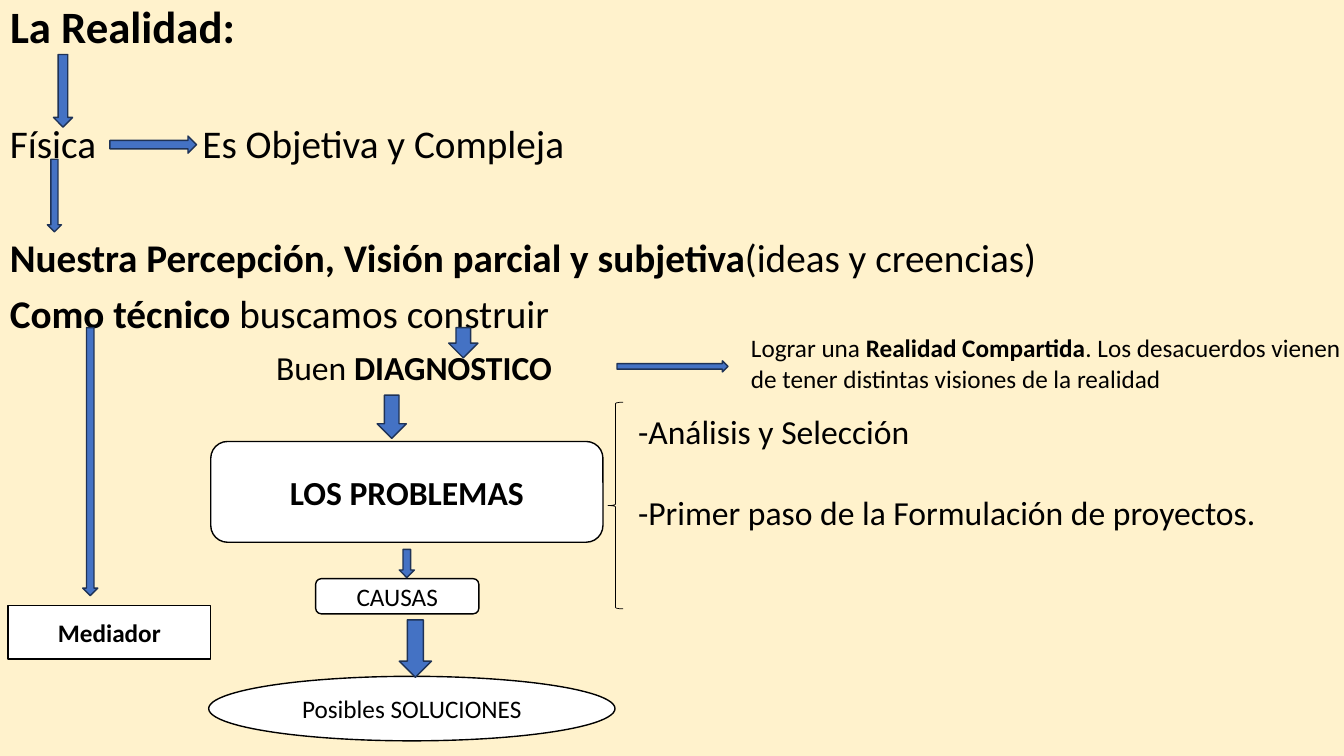
import pptx
import pptx.util
import pptx.dml.color
import pptx.enum.shapes
import pptx.enum.text
import pptx.oxml
import pptx.oxml.ns
from dataclasses import dataclass

Inches, Pt = pptx.util.Inches, pptx.util.Pt
SHAPE = pptx.enum.shapes.MSO_SHAPE
ALIGN = pptx.enum.text.PP_ALIGN
ANCHOR = pptx.enum.text.MSO_ANCHOR


@dataclass(frozen=True)
class Theme:
    font: str = "Calibri"
    background: str = "FFF2CC"
    ink: str = "000000"
    box: str = "FFFFFF"
    arrow: str = "4472C4"
    arrow_edge: str = "1E3256"
    title: int = 32
    lead: int = 28
    medium: int = 24
    small: int = 18


theme = Theme()

# Content: a paragraph is (runs, size, space before, indent), a run is (text, bold)
TITLE = [([("La Realidad:", True)], theme.title, 0, 0)]
LEAD = [
    ([("Física\tEs Objetiva y Compleja", False)], theme.lead, 0, 0),
    ([("Nuestra Percepción, Visión parcial y subjetiva", True),
      ("(ideas y creencias)", False)], theme.lead, 50.8, 0),
    ([("Como técnico ", True), ("buscamos construir", False)], theme.lead, 10, 0),
    ([("Buen ", False), ("DIAGNOSTICO", True)], theme.medium, 10, 2.64),
]
STEPS = [
    ([("-Análisis y Selección", False)], theme.medium, 0, 0),
    ([("-Primer paso de la Formulación de proyectos.", False)], theme.medium, 29, 0),
]
SHARED = [([("Lograr una ", False), ("Realidad Compartida", True),
            (". Los desacuerdos vienen de tener distintas visiones de la realidad", False)],
           theme.small, 0, 0)]

# Text areas: paragraphs, (left, top, width, height), line spacing
TEXTS = [
    (LEAD, (0, 1.19, 13.33, 2.75), 0.9),
    (STEPS, (6.23, 4.03, 6.28, 1.72), 1),
    (SHARED, (7.35, 3.25, 5.98, 0.71), 1),
]
BOXES = [
    (SHAPE.ROUNDED_RECTANGLE, (2.09, 4.38, 3.89, 1), "LOS PROBLEMAS", theme.medium, True),
    (SHAPE.ROUNDED_RECTANGLE, (3.13, 5.74, 1.62, 0.35), "CAUSAS", theme.small, False),
    (SHAPE.OVAL, (2.07, 6.71, 4.03, 0.64), "Posibles SOLUCIONES", theme.small, False),
    (SHAPE.RECTANGLE, (0.08, 6.01, 2.01, 0.53), "Mediador", theme.small, True),
]
ARROWS = [
    (0.53, 0.54, 0.19, 0.72),
    (1.09, 1.35, 0.86, 0.17),
    (0.47, 1.58, 0.14, 0.72),
    (0.82, 3.25, 0.15, 2.66),
    (4.45, 3.25, 0.29, 0.3),
    (6.12, 3.58, 1.1, 0.11),
    (3.74, 3.92, 0.29, 0.43),
    (3.96, 5.45, 0.15, 0.28),
    (3.96, 6.15, 0.32, 0.57),
]
BRACE = (6.03, 3.99, 0.15, 2.05)
TAB = 1.91


def rgb(color):
    return pptx.dml.color.RGBColor.from_string(color)


def style_run(r, size, bold):
    r.font.name, r.font.size, r.font.bold = theme.font, Pt(size), bold
    r.font.color.rgb = rgb(theme.ink)


def write(tf, paragraphs, spacing):
    tf.word_wrap = True
    tf.margin_right = 0
    tf.vertical_anchor = ANCHOR.TOP
    for i, (runs, size, before, indent) in enumerate(paragraphs):
        p = tf.paragraphs[0] if i == 0 else tf.add_paragraph()
        p.alignment = ALIGN.LEFT
        p.line_spacing, p.space_before = spacing, Pt(before)
        pPr = p._p.get_or_add_pPr()
        pPr.set("marL", str(Inches(indent)))
        for text, bold in runs:
            r = p.add_run()
            r.text = text
            style_run(r, size, bold)
        if any("\t" in text for text, _ in runs):
            tabs = pptx.oxml.parse_xml(
                f'<a:tabLst {pptx.oxml.ns.nsdecls("a")}>'
                f'<a:tab pos="{Inches(TAB)}" algn="l"/></a:tabLst>')
            pPr.append(tabs)


def add_shape(slide, kind, at, fill, edge, width=1):
    sp = slide.shapes.add_shape(kind, *map(Inches, at))
    sp.shadow.inherit = False
    if fill:
        sp.fill.solid()
        sp.fill.fore_color.rgb = rgb(fill)
    else:
        sp.fill.background()
    sp.line.color.rgb = rgb(edge)
    sp.line.width = Pt(width)
    return sp


def main():
    prs = pptx.Presentation()
    prs.slide_width, prs.slide_height = Inches(13.33), Inches(7.5)
    slide = prs.slides.add_slide(prs.slide_layouts[5])
    slide.background.fill.solid()
    slide.background.fill.fore_color.rgb = rgb(theme.background)

    # Title
    title = slide.shapes.title
    title.left, title.top, title.width, title.height = map(Inches, (0, 0, 13.33, 0.55))
    write(title.text_frame, TITLE, 0.9)

    # Running text
    for paragraphs, at, spacing in TEXTS:
        sp = slide.shapes.add_textbox(*map(Inches, at))
        write(sp.text_frame, paragraphs, spacing)

    # Boxes of the problem chain
    for kind, at, text, size, bold in BOXES:
        sp = add_shape(slide, kind, at, theme.box, theme.ink)
        tf = sp.text_frame
        tf.text = text
        tf.word_wrap = True
        tf.vertical_anchor = ANCHOR.MIDDLE
        p = tf.paragraphs[0]
        p.alignment = ALIGN.CENTER
        style_run(p.runs[0], size, bold)

    # Block arrows point along their longer side
    for at in ARROWS:
        kind = SHAPE.RIGHT_ARROW if at[2] > at[3] else SHAPE.DOWN_ARROW
        add_shape(slide, kind, at, theme.arrow, theme.arrow_edge)

    # Brace beside the steps
    add_shape(slide, SHAPE.LEFT_BRACE, BRACE, None, theme.ink, 0.5)

    prs.save("out.pptx")


if __name__ == "__main__":
    main()
